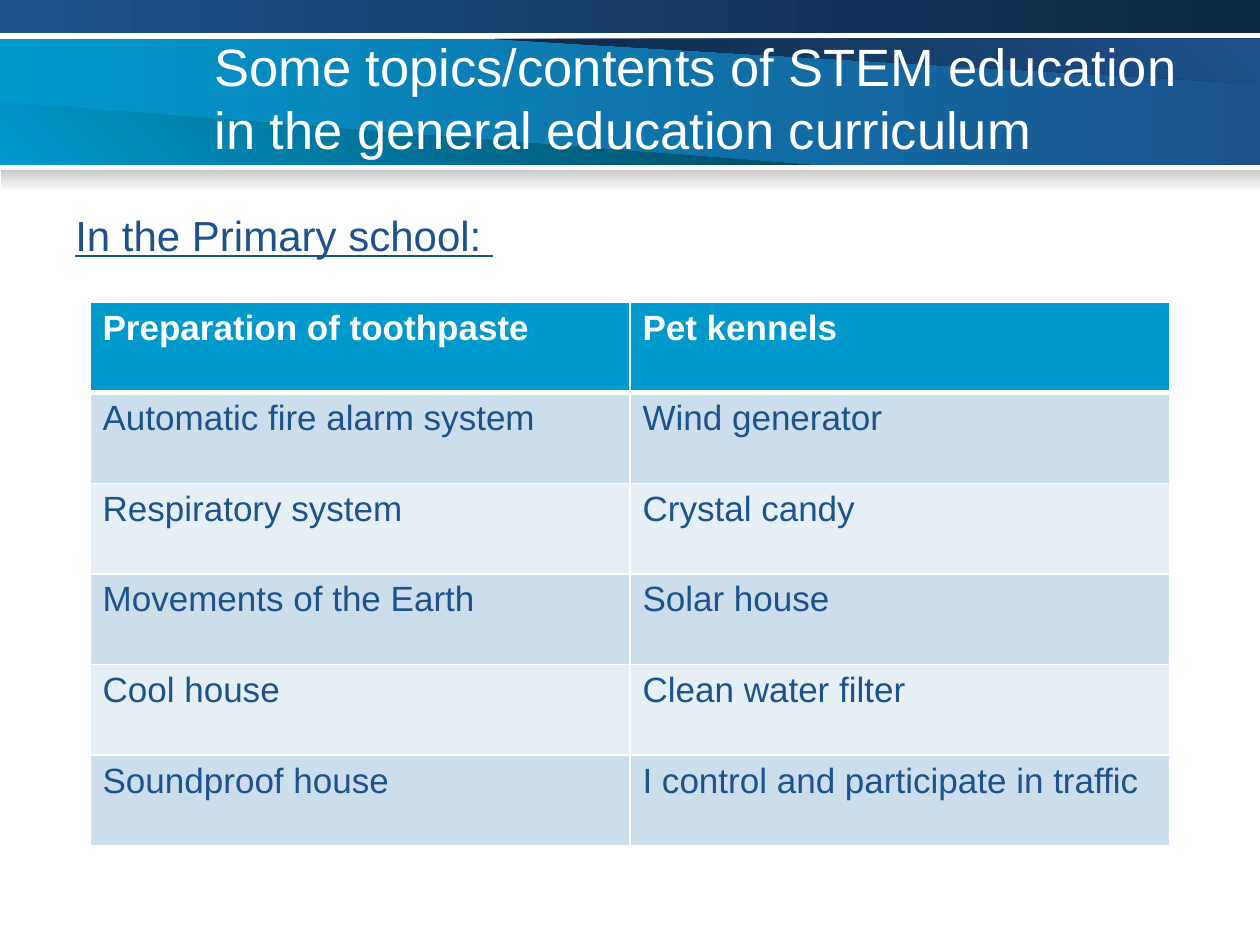
from lxml.etree import SubElement
from pptx import Presentation
from pptx.dml.color import RGBColor
from pptx.enum.shapes import MSO_SHAPE as Kind
from pptx.enum.text import MSO_ANCHOR as Anchor
from pptx.oxml.ns import qn
from pptx.util import Emu, Pt

PX = 914400 // 126
WHITE, SKY, NAVY, NIGHT = "FFFFFF", "0099CC", "1D528D", "0D2641"
TITLE = "Some topics/contents of STEM education in the general education curriculum"
LEAD = "In the Primary school: "
TOPICS = [
    ("Preparation of toothpaste", "Pet kennels"),
    ("Automatic fire alarm system", "Wind generator"),
    ("Respiratory system", "Crystal candy"),
    ("Movements of the Earth", "Solar house"),
    ("Cool house", "Clean water filter"),
    ("Soundproof house", "I control and participate in traffic"),
]
BANDS = [
    ((0, 39, 1260, 126), (SKY, NAVY), 0),
    ((0, 0, 1260, 33), (NAVY, NIGHT), 0),
    ((1, 170, 1259, 21), ("CACACA", WHITE), 270),
]
WEDGES = [
    ([(495, 39), (1260, 84), (1260, 39)], (NIGHT, NAVY), 45),
    ([(0, 102), (810, 165), (0, 165)], (SKY, "00475E"), 45),
]
GRID = (90, 302, 1080, 544)


def rgb(code):
    """Turn a hex string into a colour."""
    return RGBColor.from_string(code)


def px(*nums):
    """Turn pixels into EMU."""
    return [Emu(round(n * PX)) for n in nums]


def shade(shape, hues, angle):
    """Fill a shape with a two-colour gradient."""
    shape.shadow.inherit = False
    shape.line.fill.background()
    shape.fill.gradient()
    shape.fill.gradient_angle = angle
    for stop, hue in zip(shape.fill.gradient_stops, hues):
        stop.color.rgb = rgb(hue)


def style(para, size, hue, bold=False):
    """Set the font of a paragraph."""
    font = para.font
    font.name, font.size, font.bold = "Arial", Pt(size), bold
    font.color.rgb = rgb(hue)


def write(slide, box, text, size, hue):
    """Add a wrapped text box and return its frame."""
    frame = slide.shapes.add_textbox(*px(*box)).text_frame
    frame.word_wrap = True
    frame.text = text
    style(frame.paragraphs[0], size, hue)
    return frame


def edge(cell, row):
    """Draw white borders, thick under the header row."""
    props = cell._tc.get_or_add_tcPr()
    wide = {("lnB", 0), ("lnT", 1)}
    for side in ("lnL", "lnR", "lnT", "lnB"):
        width = Pt(3 if (side, row) in wide else 1)
        line = SubElement(props, qn("a:" + side), w=str(width))
        SubElement(SubElement(line, qn("a:solidFill")), qn("a:srgbClr"), val=WHITE)


def banner(slide):
    """Draw the header bands, wedges and title."""
    for box, hues, angle in BANDS:
        shade(slide.shapes.add_shape(Kind.RECTANGLE, *px(*box)), hues, angle)
    for dots, hues, angle in WEDGES:
        pen = slide.shapes.build_freeform(*dots[0], scale=PX)
        pen.add_line_segments(dots[1:])
        shade(pen.convert_to_shape(), hues, angle)
    frame = write(slide, (202, 34, 1036, 126), TITLE, 30, WHITE)
    frame.margin_top = frame.margin_bottom = 0
    frame.vertical_anchor = Anchor.MIDDLE
    frame.paragraphs[0].line_spacing = Pt(36)


def grid(slide):
    """Add the table of topics."""
    table = slide.shapes.add_table(len(TOPICS), len(TOPICS[0]), *px(*GRID)).table
    for r, names in enumerate(TOPICS):
        for c, name in enumerate(names):
            cell = table.cell(r, c)
            cell.text = name
            style(cell.text_frame.paragraphs[0], 20, NAVY if r else WHITE, r == 0)
            edge(cell, r)
            cell.fill.solid()
            cell.fill.fore_color.rgb = rgb(("E7EFF6", "CCDEEC")[r % 2] if r else SKY)


def main():
    """Build the slide and save it."""
    deck = Presentation()
    deck.slide_width, deck.slide_height = px(1260, 945)
    slide = deck.slides.add_slide(deck.slide_layouts[6])
    banner(slide)
    lead = write(slide, (63, 203, 1134, 60), LEAD, 24, NAVY)
    lead.paragraphs[0].font.underline = True
    grid(slide)
    deck.save("out.pptx")


if __name__ == "__main__":
    main()
